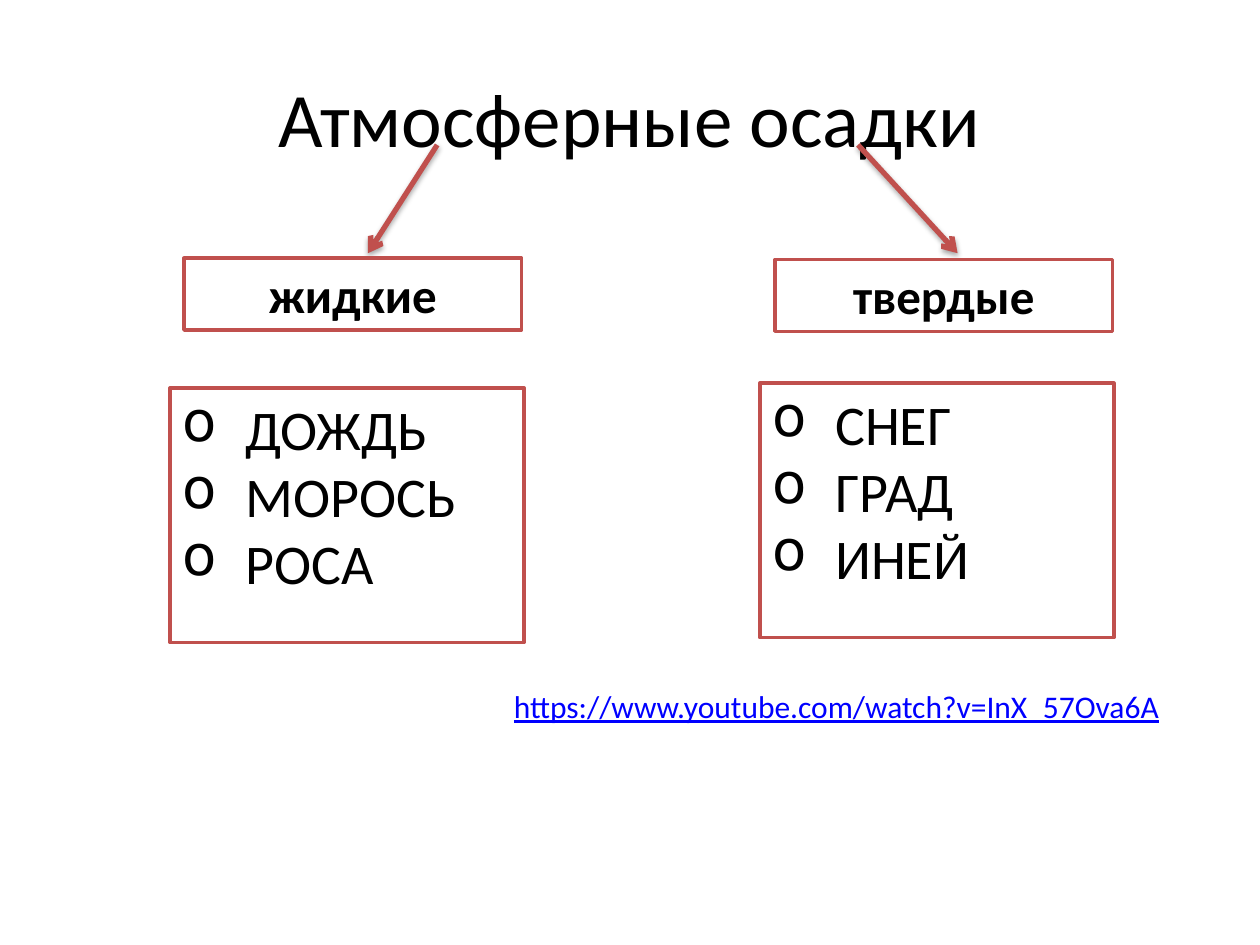
from dataclasses import dataclass

from lxml.etree import SubElement
from pptx import Presentation
from pptx.dml.color import RGBColor
from pptx.enum.shapes import MSO_CONNECTOR, MSO_SHAPE
from pptx.enum.text import MSO_ANCHOR, PP_ALIGN
from pptx.oxml.ns import qn
from pptx.slide import Slide
from pptx.text.text import TextFrame
from pptx.util import Inches, Pt

BLACK = RGBColor(0x00, 0x00, 0x00)
WHITE = RGBColor(0xFF, 0xFF, 0xFF)
RED = RGBColor(0xC0, 0x50, 0x4D)
LINK_BLUE = RGBColor(0x00, 0x00, 0xFF)

TITLE_FORMAT = {"size": Pt(44), "color": BLACK}
HEADING_FORMAT = {"size": Pt(28), "color": BLACK, "bold": True}
LIST_FORMAT = {"size": Pt(32), "color": BLACK}
ADDRESS_FORMAT = {"size": Pt(18), "color": LINK_BLUE, "underline": True}


@dataclass
class Area:
    left: float
    top: float
    width: float
    height: float

    def lengths(self) -> list:
        return [Inches(value) for value in (self.left, self.top, self.width, self.height)]


@dataclass
class Category:
    heading: str
    heading_area: Area
    kinds: list[str]
    kinds_area: Area
    arrow_start: tuple[float, float]
    arrow_end: tuple[float, float]


CATEGORIES = [
    Category("жидкие", Area(1.46, 2.05, 2.68, 0.57),
             ["ДОЖДЬ", "МОРОСЬ", "РОСА"], Area(1.35, 3.08, 2.81, 2.02),
             (3.47, 1.15), (2.92, 2.01)),
    Category("твердые", Area(6.15, 2.06, 2.68, 0.57),
             ["СНЕГ", "ГРАД", "ИНЕЙ"], Area(6.03, 3.04, 2.81, 2.02),
             (6.81, 1.15), (7.6, 2.01)),
]


def write_text(frame: TextFrame, lines: list[str], text_format: dict,
               alignment: PP_ALIGN, bulleted: bool = False) -> None:
    frame.word_wrap = True
    for index, line in enumerate(lines):
        paragraph = frame.paragraphs[0] if index == 0 else frame.add_paragraph()
        paragraph.alignment = alignment
        if bulleted:
            properties = paragraph._p.get_or_add_pPr()
            properties.set("marL", str(Inches(0.5)))
            properties.set("indent", str(Inches(-0.5)))
            SubElement(properties, qn("a:buChar"), char="o")
        run = paragraph.add_run()
        run.text = line
        run.font.name = "Calibri"
        for name, value in text_format.items():
            if name == "color":
                run.font.color.rgb = value
            else:
                setattr(run.font, name, value)


def add_label(slide: Slide, area: Area, text: str, text_format: dict,
              alignment: PP_ALIGN, anchor: MSO_ANCHOR) -> None:
    frame = slide.shapes.add_textbox(*area.lengths()).text_frame
    frame.vertical_anchor = anchor
    write_text(frame, [text], text_format, alignment)


def add_box(slide: Slide, area: Area, lines: list[str], text_format: dict,
            alignment: PP_ALIGN, bulleted: bool = False) -> None:
    shape = slide.shapes.add_shape(MSO_SHAPE.RECTANGLE, *area.lengths())
    shape.shadow.inherit = False
    shape.fill.solid()
    shape.fill.fore_color.rgb = WHITE
    shape.line.color.rgb = RED
    shape.line.width = Pt(2)
    shape.text_frame.vertical_anchor = MSO_ANCHOR.TOP
    write_text(shape.text_frame, lines, text_format, alignment, bulleted)


def add_arrow(slide: Slide, start: tuple[float, float], end: tuple[float, float]) -> None:
    points = [Inches(value) for value in (*start, *end)]
    connector = slide.shapes.add_connector(MSO_CONNECTOR.STRAIGHT, *points)
    connector.line.color.rgb = RED
    connector.line.width = Pt(3)
    SubElement(connector.line._get_or_add_ln(), qn("a:tailEnd"), type="arrow")
    effects = SubElement(connector._element.spPr, qn("a:effectLst"))
    shadow = SubElement(effects, qn("a:outerShdw"), blurRad=str(Pt(3.1)),
                        dist=str(Pt(1.8)), dir="5400000", rotWithShape="0")
    color = SubElement(shadow, qn("a:srgbClr"), val=str(BLACK))
    SubElement(color, qn("a:alpha"), val="35000")


def main() -> None:
    presentation = Presentation()
    presentation.slide_width = Inches(10)
    presentation.slide_height = Inches(7.5)
    slide = presentation.slides.add_slide(presentation.slide_layouts[6])

    add_label(slide, Area(0.5, 0.3, 9, 1.25), "Атмосферные осадки",
              TITLE_FORMAT, PP_ALIGN.CENTER, MSO_ANCHOR.MIDDLE)
    for category in CATEGORIES:
        add_arrow(slide, category.arrow_start, category.arrow_end)
        add_box(slide, category.heading_area, [category.heading],
                HEADING_FORMAT, PP_ALIGN.CENTER)
        add_box(slide, category.kinds_area, category.kinds,
                LIST_FORMAT, PP_ALIGN.LEFT, bulleted=True)
    add_label(slide, Area(3.98, 5.4, 5.37, 0.4),
              "https://www.youtube.com/watch?v=InX_57Ova6A",
              ADDRESS_FORMAT, PP_ALIGN.LEFT, MSO_ANCHOR.TOP)

    presentation.save("out.pptx")


if __name__ == "__main__":
    main()
